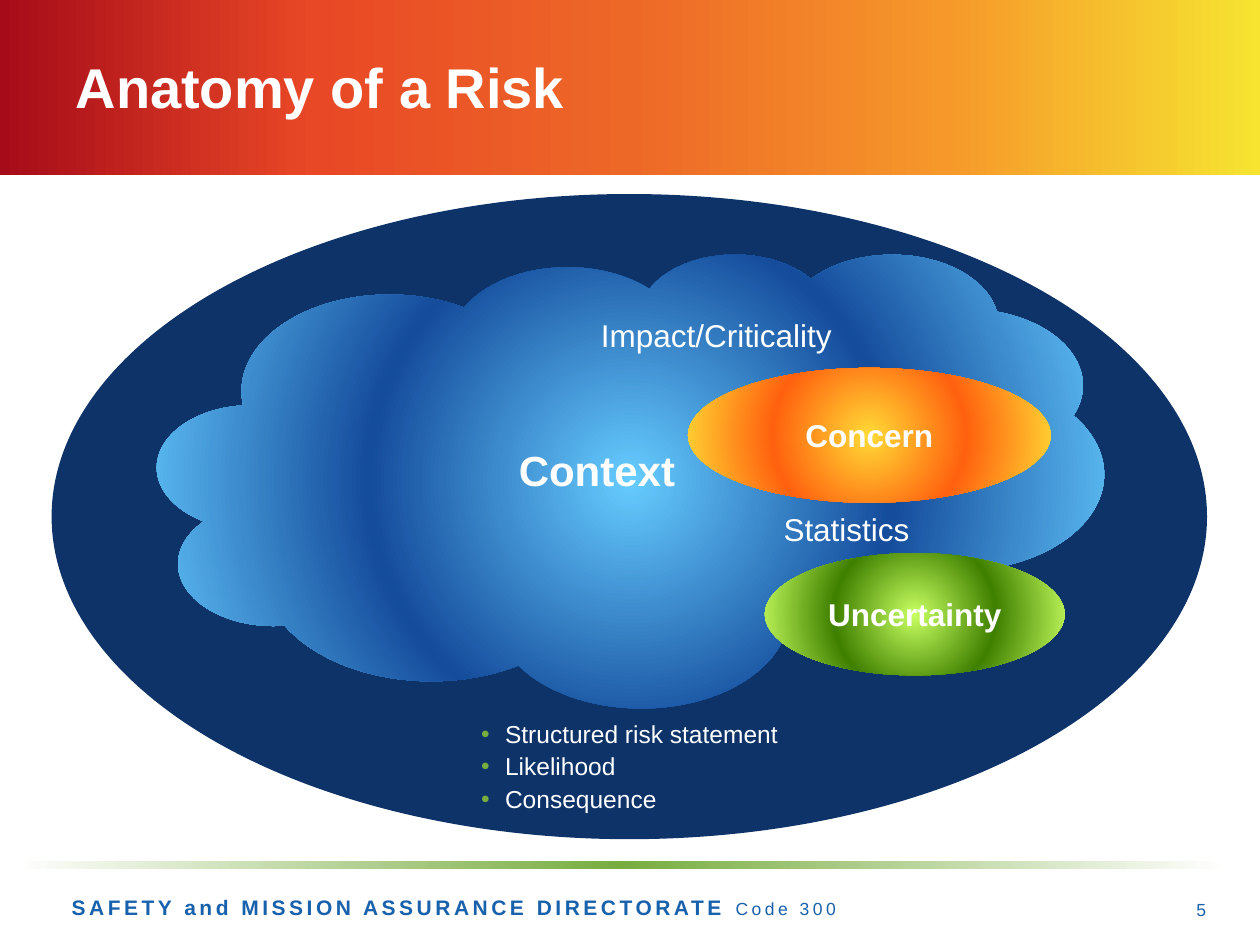
"""Build the Anatomy of a Risk slide."""
from lxml import etree
from pptx import Presentation
from pptx.dml.color import RGBColor
from pptx.enum.shapes import MSO_SHAPE
from pptx.enum.text import MSO_ANCHOR, PP_ALIGN
from pptx.oxml.ns import qn
from pptx.util import Inches, Pt

RECT, OVAL, CLOUD = MSO_SHAPE.RECTANGLE, MSO_SHAPE.OVAL, MSO_SHAPE.CLOUD
LEFT, MID, RIGHT = PP_ALIGN.LEFT, PP_ALIGN.CENTER, PP_ALIGN.RIGHT
TOP, CENTER = MSO_ANCHOR.TOP, MSO_ANCHOR.MIDDLE

WHITE = RGBColor(0xFF, 0xFF, 0xFF)
NAVY = RGBColor(0x0D, 0x33, 0x69)
BLUE = RGBColor(0x18, 0x61, 0xAC)
GREEN = RGBColor(0x77, 0xAD, 0x3F)
SKY = RGBColor(0x66, 0xCC, 0xFF)
ROYAL = RGBColor(0x15, 0x4C, 0x9C)
GOLD = RGBColor(0xFF, 0xDA, 0x36)
ORANGE = RGBColor(0xFF, 0x61, 0x0E)
LIME = RGBColor(0xC8, 0xFF, 0x62)
LEAF = RGBColor(0x40, 0x80, 0x00)
FIRE = [RGBColor(0xA6, 0x0B, 0x19), RGBColor(0xE9, 0x48, 0x26),
        RGBColor(0xED, 0x68, 0x27), RGBColor(0xF6, 0x98, 0x2A),
        RGBColor(0xF6, 0xE4, 0x31)]

TITLE = "Anatomy of a Risk"
POINTS = ["Structured risk statement", "Likelihood", "Consequence"]
BANDS = [
    ((0, 0, 10, 1.39), FIRE),
    ((0.12, 6.83, 9.61, 0.07), [WHITE, GREEN, WHITE]),
]
BLOBS = [
    (CLOUD, (1.25, 2.01, 7.51, 3.6), "Context", 24, [SKY, ROYAL, SKY]),
    (OVAL, (5.46, 2.92, 2.88, 1.07), "Concern", 18, [GOLD, ORANGE, GOLD]),
    (OVAL, (6.07, 4.39, 2.38, 0.97), "Uncertainty", 18, [LIME, LEAF, LIME]),
]
LABELS = [
    ((6.12, 4, 1.21, 0.4), "Statistics"),
    ((4.67, 2.46, 2.05, 0.4), "Impact/Criticality"),
]


def place(box):
    return [Inches(n) for n in box]


def blend(shape, tones, round_=False):
    shape.fill.gradient()
    grad = shape.element.spPr.find(qn("a:gradFill"))
    grad.clear()
    stops = etree.SubElement(grad, qn("a:gsLst"))
    for i, tone in enumerate(tones):
        pos = 100000 * i // (len(tones) - 1)
        stop = etree.SubElement(stops, qn("a:gs"), pos=str(pos))
        etree.SubElement(stop, qn("a:srgbClr"), val=str(tone))
    if round_:
        way = etree.SubElement(grad, qn("a:path"), path="circle")
        etree.SubElement(way, qn("a:fillToRect"),
                         {side: "50000" for side in "ltrb"})
    else:
        etree.SubElement(grad, qn("a:lin"), ang="0", scaled="0")


def draw(slide, kind, box):
    shape = slide.shapes.add_shape(kind, *place(box))
    shape.shadow.inherit = False
    shape.line.fill.background()
    return shape


def write(frame, text, size=18, color=WHITE, bold=False, align=LEFT,
          anchor=TOP, wrap=True, gap=None, more=False):
    frame.word_wrap = wrap
    frame.vertical_anchor = anchor
    para = frame.paragraphs[-1]
    if more:
        para = frame.add_paragraph()
    para.alignment = align
    run = para.add_run()
    run.text = text
    font = run.font
    font.name, font.size, font.bold = "Arial", Pt(size), bold
    font.color.rgb = color
    if gap:
        run.font._element.set("spc", str(gap * 100))
    return para


def bullet(para):
    para.line_spacing = 0.9
    para.space_before = Pt(3.5)
    props = para._p.get_or_add_pPr()
    hang = Inches(0.19)
    props.set("marL", str(hang))
    props.set("indent", str(-hang))
    tone = etree.SubElement(props, qn("a:buClr"))
    etree.SubElement(tone, qn("a:srgbClr"), val=str(GREEN))
    etree.SubElement(props, qn("a:buFont"), typeface="Arial")
    etree.SubElement(props, qn("a:buChar"), char="•")


def main():
    deck = Presentation()
    deck.slide_width, deck.slide_height = Inches(10), Inches(7.5)
    slide = deck.slides.add_slide(deck.slide_layouts[5])

    def label(box):
        return slide.shapes.add_textbox(*place(box)).text_frame

    for box, tones in BANDS:
        blend(draw(slide, RECT, box), tones)
    back = draw(slide, OVAL, (0.41, 1.54, 9.17, 5.12))
    back.fill.solid()
    back.fill.fore_color.rgb = NAVY
    for kind, box, text, size, tones in BLOBS:
        blob = draw(slide, kind, box)
        blend(blob, tones, round_=True)
        write(blob.text_frame, text, size=size, bold=True,
              align=MID, anchor=CENTER)
    for box, text in LABELS:
        write(label(box), text, wrap=False)

    notes = label((3.72, 5.68, 2.56, 0.96))
    for i, text in enumerate(POINTS):
        bullet(write(notes, text, size=14, more=i > 0))

    foot = label((0.47, 7.05, 8.25, 0.3))
    write(foot, "SAFETY and MISSION ASSURANCE DIRECTORATE ", size=12,
          color=BLUE, bold=True, gap=2)
    write(foot, "Code 300", size=10, color=BLUE, gap=2)
    write(label((9.24, 7.02, 0.43, 0.4)), "5", size=10, color=BLUE,
          align=RIGHT, anchor=CENTER)

    title = slide.shapes.title
    title.left, title.top, title.width, title.height = place(
        (0.5, 0.13, 9, 1.17))
    write(title.text_frame, TITLE, size=32, bold=True,
          anchor=CENTER).line_spacing = 0.9
    slide.shapes.element.append(title.element)
    deck.save("out.pptx")


if __name__ == "__main__":
    main()
